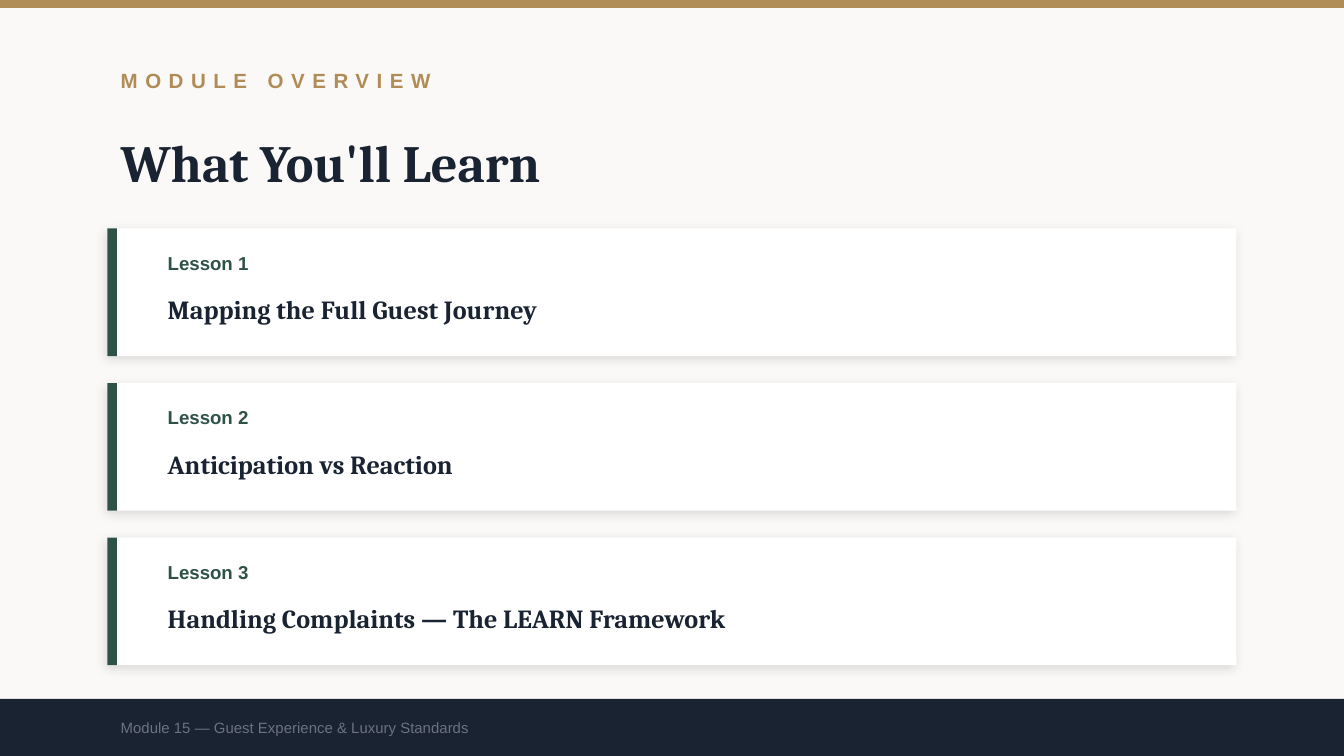
"""Build a module overview slide with three lesson cards."""
from dataclasses import dataclass

from lxml import etree
from pptx import Presentation
from pptx.dml.color import RGBColor
from pptx.enum.shapes import MSO_SHAPE
from pptx.enum.text import MSO_ANCHOR
from pptx.oxml import parse_xml
from pptx.oxml.ns import nsdecls
from pptx.shapes.autoshape import Shape
from pptx.slide import Slide
from pptx.util import Inches, Length, Pt

RECTANGLE = MSO_SHAPE.RECTANGLE
MIDDLE = MSO_ANCHOR.MIDDLE

COLUMNS = 100
ROWS = COLUMNS * 9 / 16
CELL = 0.1
MARGIN = 8
CARD_TOP, CARD_HEIGHT, CARD_PITCH = 17, 9.5, 11.5
FOOTER_TOP = 52
FOOTER_HEIGHT = ROWS - FOOTER_TOP

PAPER, WHITE, GOLD = "FAF9F7", "FFFFFF", "B08D57"
NAVY, GREEN, GRAY = "1A2332", "2E5148", "6B7280"
SANS, SERIF = "Arial", "Cambria"


@dataclass(frozen=True)
class Area:
    column: float
    row: float
    columns: float
    rows: float

    def lengths(self) -> tuple[Length, ...]:
        return tuple(grid(cells) for cells in (self.column, self.row, self.columns, self.rows))


@dataclass(frozen=True)
class Style:
    font: str
    size: float
    color: str
    bold: bool = True
    spacing: float = 0


EYEBROW = Style(SANS, 11, GOLD, spacing=4)
TITLE = Style(SERIF, 28, NAVY)
LESSON_LABEL = Style(SANS, 10, GREEN)
LESSON_TITLE = Style(SERIF, 14, NAVY)
FOOTER = Style(SANS, 8, GRAY, bold=False)

LESSONS = (
    "Mapping the Full Guest Journey",
    "Anticipation vs Reaction",
    "Handling Complaints — The LEARN Framework",
)


def grid(cells: float) -> Length:
    return Inches(round(cells * CELL, 4))


def rgb(color: str) -> RGBColor:
    return RGBColor.from_string(color)


def add_block(slide: Slide, area: Area, color: str) -> Shape:
    shape = slide.shapes.add_shape(RECTANGLE, *area.lengths())
    shape.shadow.inherit = False
    shape.fill.solid()
    shape.fill.fore_color.rgb = rgb(color)
    shape.line.fill.background()
    return shape


def add_soft_shadow(shape: Shape) -> None:
    effects: etree._Element = shape._element.spPr.find("{*}effectLst")
    effects.append(parse_xml(
        f'<a:outerShdw {nsdecls("a")} blurRad="{Pt(6)}" dist="{Pt(2)}" '
        f'dir="{135 * 60000}" algn="bl" rotWithShape="0">'
        '<a:srgbClr val="000000"><a:alpha val="12000"/></a:srgbClr></a:outerShdw>'
    ))


def add_text(slide: Slide, area: Area, text: str, style: Style) -> None:
    frame = slide.shapes.add_textbox(*area.lengths()).text_frame
    frame.word_wrap = True
    frame.vertical_anchor = MIDDLE
    paragraph = frame.paragraphs[0]
    run = paragraph.add_run()
    run.text = text
    paragraph.font.name = style.font
    paragraph.font.size = Pt(style.size)
    paragraph.font.bold = style.bold
    paragraph.font.color.rgb = rgb(style.color)
    if style.spacing:
        run._r.get_or_add_rPr().set("spc", str(int(style.spacing * 100)))


def add_lesson(slide: Slide, index: int, title: str) -> None:
    top = CARD_TOP + index * CARD_PITCH
    add_soft_shadow(add_block(slide, Area(MARGIN, top, COLUMNS - 2 * MARGIN, CARD_HEIGHT), WHITE))
    add_block(slide, Area(MARGIN, top, 0.7, CARD_HEIGHT), GREEN)
    text_left = MARGIN + 3.5
    add_text(slide, Area(text_left, top + 0.8, 70, 3.5), f"Lesson {index + 1}", LESSON_LABEL)
    add_text(slide, Area(text_left, top + 4, 78, 4), title, LESSON_TITLE)


def main() -> None:
    presentation = Presentation()
    presentation.slide_width = grid(COLUMNS)
    presentation.slide_height = grid(ROWS)
    slide = presentation.slides.add_slide(presentation.slide_layouts[6])
    slide.background.fill.solid()
    slide.background.fill.fore_color.rgb = rgb(PAPER)

    add_block(slide, Area(0, 0, COLUMNS, 0.6), GOLD)
    add_text(slide, Area(MARGIN, 4, 80, 4), "MODULE OVERVIEW", EYEBROW)
    add_text(slide, Area(MARGIN, 9, 80, 6), "What You'll Learn", TITLE)
    for index, title in enumerate(LESSONS):
        add_lesson(slide, index, title)
    add_block(slide, Area(0, FOOTER_TOP, COLUMNS, FOOTER_HEIGHT), NAVY)
    add_text(slide, Area(MARGIN, FOOTER_TOP, 80, FOOTER_HEIGHT),
             "Module 15 — Guest Experience & Luxury Standards", FOOTER)
    presentation.save("out.pptx")


if __name__ == "__main__":
    main()
